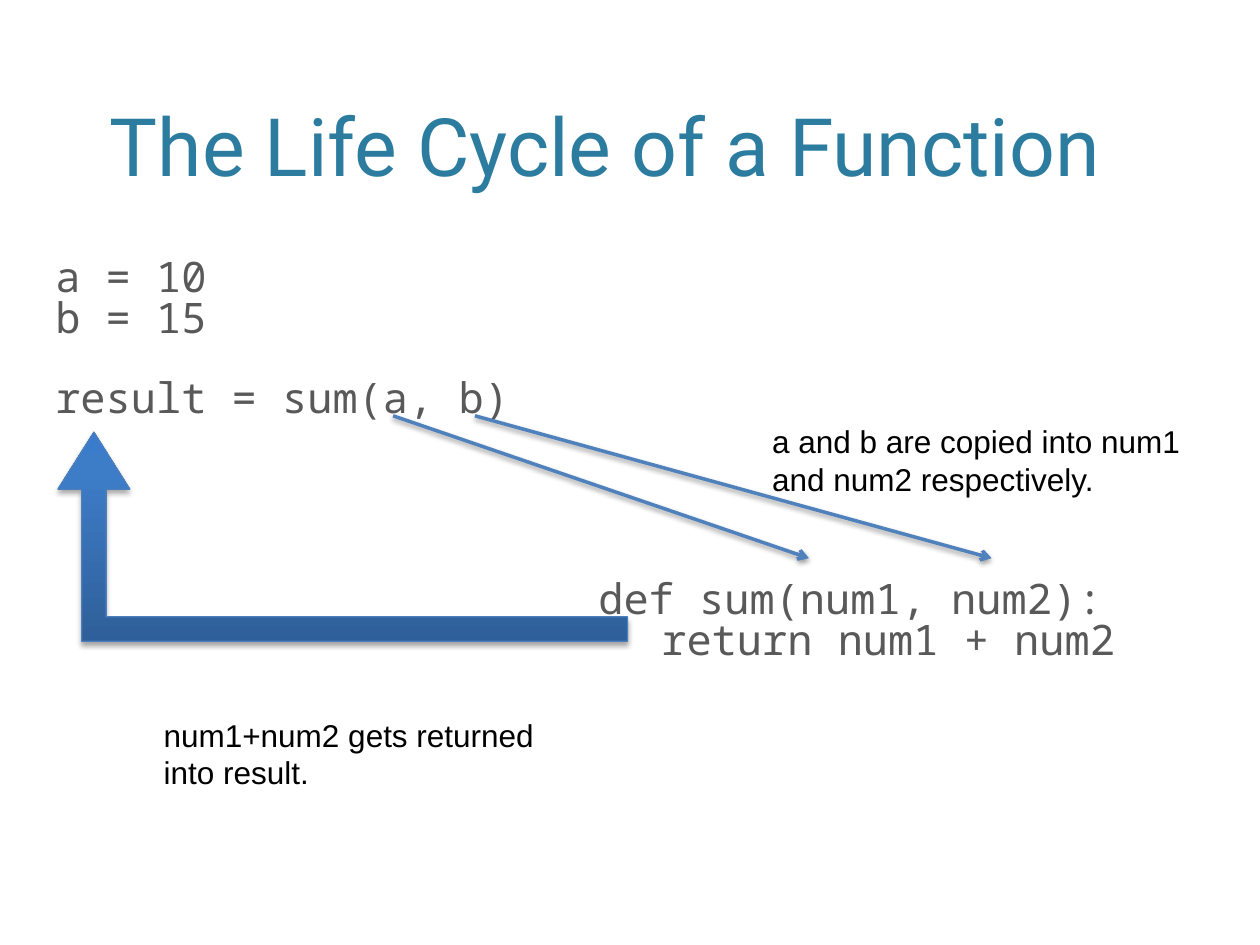
import copy

import pptx
import pptx.dml.color
import pptx.enum.shapes
import pptx.enum.text
import pptx.oxml
import pptx.oxml.ns
import pptx.util

Pt = pptx.util.Pt
qn = pptx.oxml.ns.qn
DRAWING = pptx.oxml.ns.nsdecls("a")
CODE_PITCH = 23.04  # height of one code line


def color(value):
    return pptx.dml.color.RGBColor.from_string(value)


def add_text(page, bounds, lines, font, size, fill):
    """Add a wrapped text box with one paragraph per line."""
    box = page.shapes.add_textbox(*(Pt(length) for length in bounds))
    frame = box.text_frame
    frame.word_wrap = True
    for index, line in enumerate(lines):
        para = frame.paragraphs[0] if index == 0 else frame.add_paragraph()
        span = para.add_run()
        span.text = line
        span.font.name = font
        span.font.size = Pt(size)
        span.font.color.rgb = color(fill)
    return frame


def add_title(page, bounds, text):
    frame = add_text(page, bounds, [text], "Roboto", 46, "2C7C9F")
    frame.vertical_anchor = pptx.enum.text.MSO_ANCHOR.BOTTOM
    frame.paragraphs[0].alignment = pptx.enum.text.PP_ALIGN.CENTER


def add_code(page, bounds, lines):
    """Add code at an even line pitch, with tab stops every half inch."""
    frame = add_text(page, bounds, lines, "Noto Sans Mono", 24, "595959")
    for para in frame.paragraphs:
        para.line_spacing = Pt(CODE_PITCH)
        if para.text.startswith("\t"):
            para._p.get_or_add_pPr().append(pptx.oxml.parse_xml(
                f'<a:tabLst {DRAWING}><a:tab pos="{Pt(36)}" algn="l"/></a:tabLst>'))
    return frame


def add_note(page, bounds, text):
    add_text(page, bounds, [text], "Arial", 18, "000000")


def add_shadow(shape, opacity, distance):
    shape._element.spPr.append(pptx.oxml.parse_xml(
        f'<a:effectLst {DRAWING}><a:outerShdw blurRad="{Pt(3.1)}" '
        f'dist="{Pt(distance)}" dir="5400000" rotWithShape="0">'
        f'<a:srgbClr val="000000"><a:alpha val="{opacity * 1000}"/></a:srgbClr>'
        '</a:outerShdw></a:effectLst>'))


def add_return_arrow(page, bounds):
    arrow = page.shapes.add_shape(
        pptx.enum.shapes.MSO_SHAPE.BENT_UP_ARROW, *(Pt(length) for length in bounds))
    arrow._element.spPr.find(qn("a:xfrm")).set("flipH", "1")
    for index, value in enumerate((0.117, 0.172, 0.273)):
        arrow.adjustments[index] = value
    # Three-stop gradient from bottom to top
    arrow.fill.gradient()
    arrow.fill.gradient_angle = 90
    stop_list = arrow._element.spPr.find(".//" + qn("a:gsLst"))
    stop_list.append(copy.deepcopy(stop_list[-1]))
    stops = ((0, "2F5F99"), (0.8, "3D7CC7"), (1, "3A7CCB"))
    for stop, (position, value) in zip(arrow.fill.gradient_stops, stops):
        stop.position = position
        stop.color.rgb = color(value)
    arrow.line.color.rgb = color("4B7EBC")
    arrow.line.width = Pt(0.75)
    add_shadow(arrow, 35, 1.8)


def add_argument_arrow(page, start, end):
    line = page.shapes.add_connector(
        pptx.enum.shapes.MSO_CONNECTOR.STRAIGHT,
        *(Pt(length) for length in (*start, *end)))
    line.line.color.rgb = color("4F81BD")
    line.line.width = Pt(2)
    line.line._get_or_add_ln().append(
        pptx.oxml.parse_xml(f'<a:tailEnd {DRAWING} type="arrow"/>'))
    add_shadow(line, 38, 1.6)


def main():
    deck = pptx.Presentation()
    deck.slide_width, deck.slide_height = Pt(720), Pt(540)
    page = deck.slides.add_slide(deck.slide_layouts[6])

    add_title(page, (14.4, 8.64, 662.4, 105.12), "The Life Cycle of a Function")

    # Calling code, with a one-line gap before the call
    caller = add_code(page, (24.48, 145.6, 365.76, 310.9),
                      ["a = 10", "b = 15", "result = sum(a, b)"])
    caller.paragraphs[2].space_before = Pt(CODE_PITCH)

    # Function definition
    add_code(page, (334.8, 329.5, 342, 110.4),
             ["def sum(num1, num2):", "\treturn num1 + num2"])

    # Notes and the return path
    add_note(page, (434.16, 237.6, 256.32, 51.12),
             "a and b are copied into num1 and num2 respectively.")
    add_return_arrow(page, (33.12, 246.96, 325.44, 119.52))
    add_note(page, (86.4, 405.36, 247.68, 51.12),
             "num1+num2 gets returned into result.")

    # Arguments to parameters
    for argument_x, parameter_x in ((224.64, 462.24), (271.44, 566.64)):
        add_argument_arrow(page, (argument_x, 237.6), (parameter_x, 318.96))

    deck.save("out.pptx")


if __name__ == "__main__":
    main()
